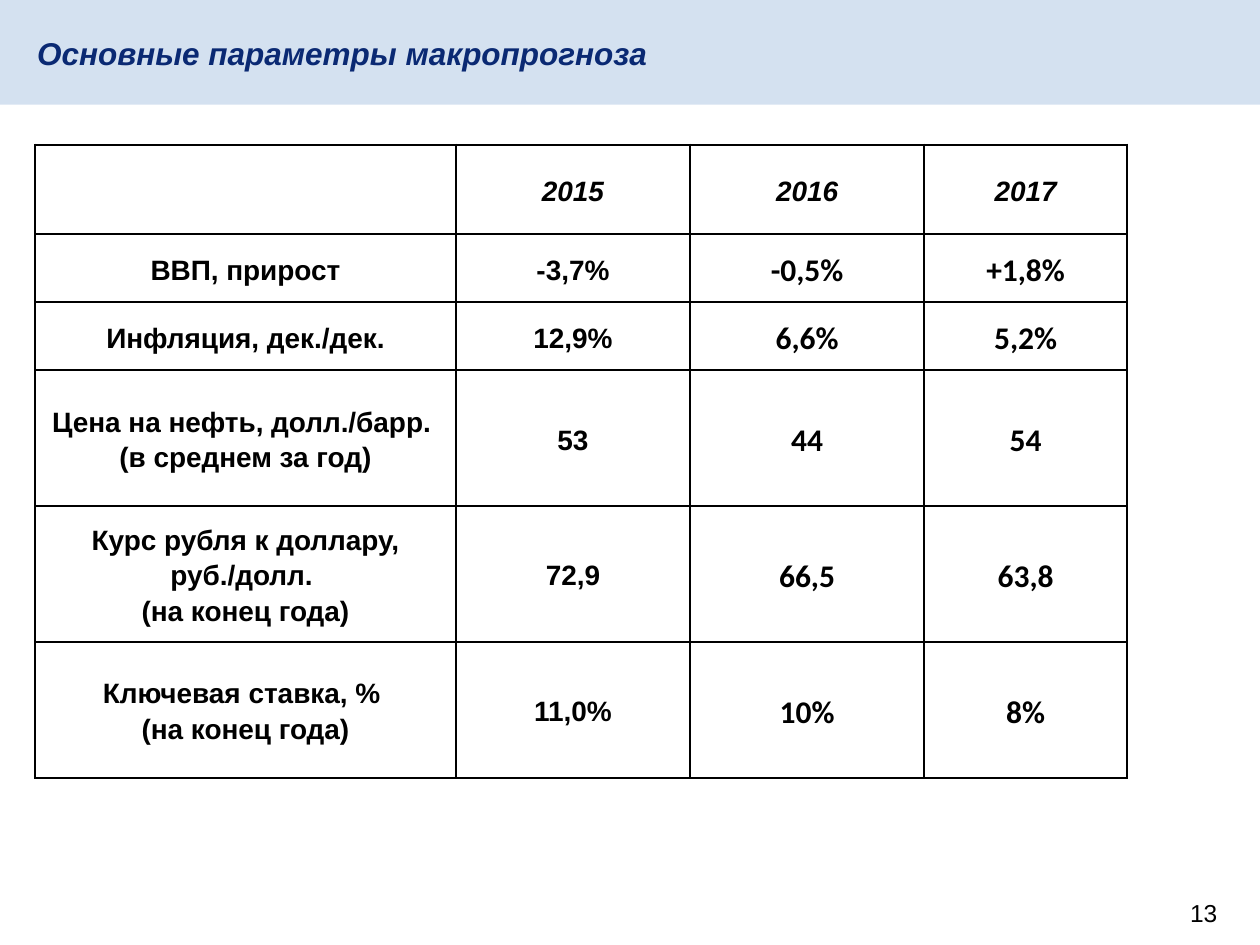
import pptx
import pptx.util
import pptx.dml.color
import pptx.enum.shapes
import pptx.enum.text
import pptx.oxml
import pptx.oxml.ns

Cm, Pt = pptx.util.Cm, pptx.util.Pt
ALIGN = pptx.enum.text.PP_ALIGN
theme = {
    "band": "D4E1F0", "title": "0A2973", "ink": "000000",
    "big": 18, "mid": 16, "small": 14,
    "main": "Arial", "alt": "Calibri",
    "thick": 1.5, "thin": 1,
}


def write(frame, text, size, align, color="ink", font="main", bold=True, slant=False):
    """Fill the first paragraph, one run per line."""
    para = frame.paragraphs[0]
    para.alignment = align
    for n, line in enumerate(text.split("\n")):
        if n:
            para.add_line_break()
        run = para.add_run()
        run.text = line
        run.font.name, run.font.size = theme[font], Pt(theme[size])
        run.font.bold, run.font.italic = bold, slant
        run.font.color.rgb = pptx.dml.color.RGBColor.from_string(theme[color])
    return para


def edge(cell, side, width):
    """Draw one border of a cell."""
    cell._tc.get_or_add_tcPr().append(pptx.oxml.parse_xml(
        f'<a:ln{side} {pptx.oxml.ns.nsdecls("a")} w="{Pt(theme[width])}">'
        f'<a:solidFill><a:srgbClr val="{theme["ink"]}"/></a:solidFill></a:ln{side}>'))


deck = pptx.Presentation()
deck.slide_width, deck.slide_height = Cm(25.4), Cm(19.05)
slide = deck.slides.add_slide(deck.slide_layouts[6])

# Title band
band = slide.shapes.add_shape(
    pptx.enum.shapes.MSO_SHAPE.RECTANGLE, 0, 0, deck.slide_width, Cm(2.11))
band.shadow.inherit = False
band.fill.solid()
band.fill.fore_color.rgb = pptx.dml.color.RGBColor.from_string(theme["band"])
band.line.fill.background()

# Title
title = slide.shapes.add_textbox(Cm(0.5), Cm(0.56), Cm(24.4), Cm(1.02))
title.text_frame.word_wrap = True
write(title.text_frame, "Основные параметры макропрогноза", "big", ALIGN.LEFT,
      color="title", slant=True)

# Forecast table
data = [
    ["", "2015", "2016", "2017"],
    ["ВВП, прирост", "-3,7%", "-0,5%", "+1,8%"],
    ["Инфляция, дек./дек.", "12,9%", "6,6%", "5,2%"],
    ["Цена на нефть, долл./барр. \n(в среднем за год)", "53", "44", "54"],
    ["Курс рубля к доллару, руб./долл. \n(на конец года)", "72,9", "66,5", "63,8"],
    ["Ключевая ставка, % \n(на конец года)", "11,0%", "10%", "8%"],
]
wide = [8.48, 4.72, 4.72, 4.09]
high = [1.8, 1.37, 1.37, 2.74, 2.74, 2.74]
table = slide.shapes.add_table(len(high), len(wide), Cm(0.71), Cm(2.92),
                               Cm(sum(wide)), Cm(sum(high))).table
table.first_row = table.horz_banding = False
for col, size in zip(table.columns, wide):
    col.width = Cm(size)
for row, size in zip(table.rows, high):
    row.height = Cm(size)

for r, line in enumerate(data):
    for c, text in enumerate(line):
        cell = table.cell(r, c)
        cell.vertical_anchor = pptx.enum.text.MSO_ANCHOR.MIDDLE
        cell.margin_left = cell.margin_right = Cm(0.18)
        cell.margin_top = cell.margin_bottom = 0
        # Header edges are thick, except under the years
        edge(cell, "L", "thick")
        edge(cell, "R", "thick")
        edge(cell, "T", "thick" if r == 0 or (r, c) == (1, 0) else "thin")
        edge(cell, "B", "thick" if (r, c) == (0, 0) else "thin")
        cell.fill.background()
        if text:
            late = r > 0 and c > 1
            para = write(cell.text_frame, text, "big" if late else "mid", ALIGN.CENTER,
                         font="alt" if late else "main", slant=r == 0)
            para.line_spacing = 1.15

# Page number
page = slide.shapes.add_textbox(Cm(19.79), Cm(17.98), Cm(5), Cm(0.99))
page.text_frame.word_wrap = True
write(page.text_frame, "13", "small", ALIGN.RIGHT, bold=False)

deck.save("out.pptx")
